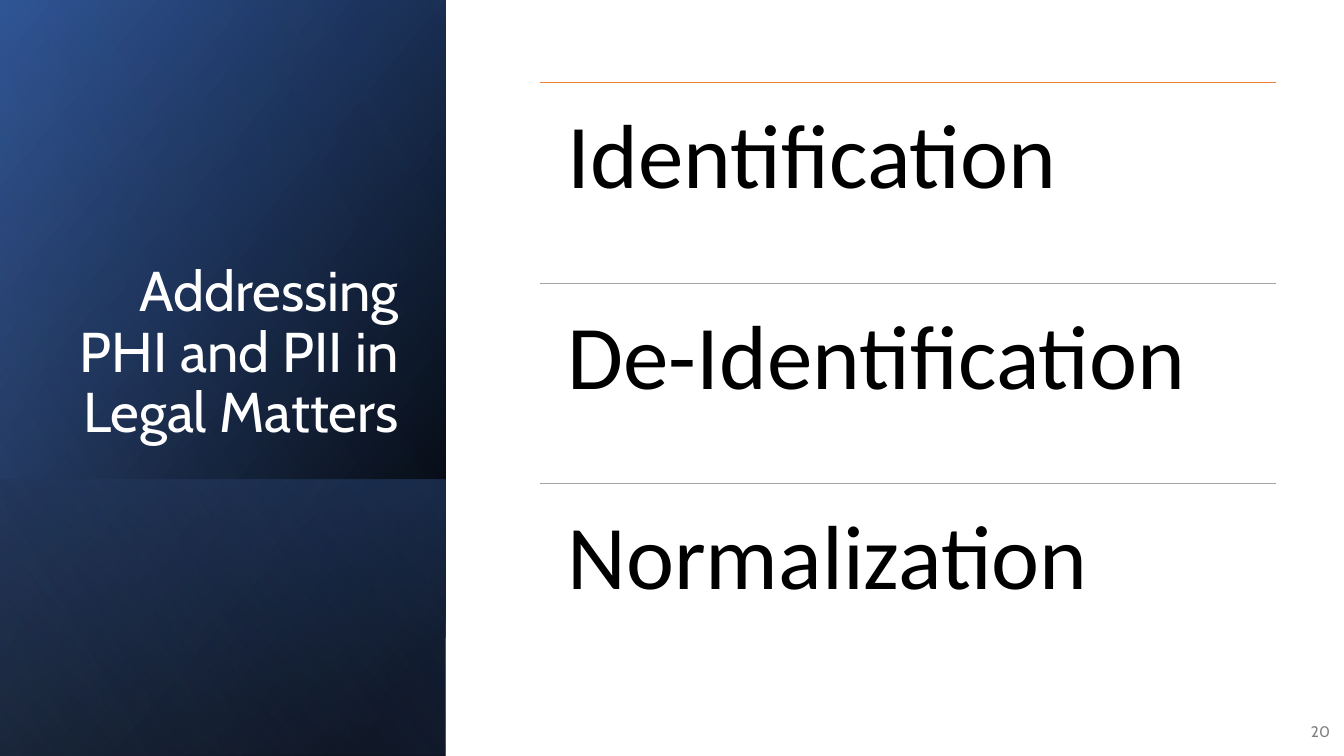
from lxml.etree import SubElement
from pptx import Presentation
from pptx.dml.color import RGBColor
from pptx.enum.shapes import MSO_CONNECTOR, MSO_SHAPE
from pptx.enum.text import MSO_ANCHOR, PP_ALIGN
from pptx.oxml.ns import qn
from pptx.util import Inches, Pt

BLACK = RGBColor(0x00, 0x00, 0x00)
WHITE = RGBColor(0xFF, 0xFF, 0xFF)
GRAY = RGBColor(0x80, 0x80, 0x80)
DEEP_BLUE = RGBColor(0x2F, 0x55, 0x97)
MID_BLUE = RGBColor(0x44, 0x72, 0xC4)
PALE_BLUE = RGBColor(0x8F, 0xAA, 0xDC)
ORANGE = RGBColor(0xED, 0x7D, 0x31)
RULE_GRAY = RGBColor(0xA5, 0xA5, 0xA5)

PANEL_WIDTH = 4.42
SLIDE_HEIGHT = 7.5
LIST_LEFT, LIST_TOP, LIST_WIDTH, ROW_HEIGHT = 5.36, 0.82, 7.3, 1.99


def add_gradient_panel(page, top, height, stops, angle):
    """Add a turned, mirrored panel; stops are (position, colour, opacity %)."""
    left = (PANEL_WIDTH - height) / 2
    panel = page.shapes.add_shape(
        MSO_SHAPE.RECTANGLE, Inches(left), Inches(top - left),
        Inches(height), Inches(PANEL_WIDTH))
    panel.rotation = 90
    panel.shadow.inherit = False
    panel.line.fill.background()
    properties = panel._element.spPr
    properties.find(qn("a:xfrm")).set("flipH", "1")
    panel.fill.gradient()
    panel.fill.gradient_angle = 360 - angle
    for stop, (position, color, _) in zip(panel.fill.gradient_stops, stops):
        stop.position = position
        stop.color.rgb = color
    for color_element, (_, _, opacity) in zip(properties.iter(qn("a:srgbClr")), stops):
        if opacity < 100:
            SubElement(color_element, qn("a:alpha")).set("val", str(opacity * 1000))


def add_text(page, bounds, text, font, size, color,
             align=PP_ALIGN.LEFT, anchor=MSO_ANCHOR.TOP, inset=None):
    box = page.shapes.add_textbox(*(Inches(length) for length in bounds))
    frame = box.text_frame
    frame.word_wrap = True
    frame.vertical_anchor = anchor
    if inset is not None:
        frame.margin_left = frame.margin_right = Inches(inset)
        frame.margin_top = frame.margin_bottom = Inches(inset)
    frame.text = text
    paragraph = frame.paragraphs[0]
    paragraph.alignment = align
    span = paragraph.runs[0]
    span.font.name = font
    span.font.size = Pt(size)
    span.font.color.rgb = color
    return paragraph


def add_rule(page, top, color):
    rule = page.shapes.add_connector(
        MSO_CONNECTOR.STRAIGHT, Inches(LIST_LEFT), Inches(top),
        Inches(LIST_LEFT + LIST_WIDTH), Inches(top))
    rule.line.color.rgb = color
    rule.line.width = Pt(0.5)
    SubElement(rule._element.spPr, qn("a:effectLst"))


def add_topic(page, top, topic, rule_color):
    add_rule(page, top, rule_color)
    paragraph = add_text(page, (LIST_LEFT, top, LIST_WIDTH, ROW_HEIGHT),
                         topic, "Calibri", 65, BLACK, inset=0.27)
    paragraph.line_spacing = 0.9


def main():
    deck = Presentation()
    deck.slide_width = Inches(13.33)
    deck.slide_height = Inches(SLIDE_HEIGHT)
    page = deck.slides.add_slide(deck.slide_layouts[6])

    add_gradient_panel(page, 0, SLIDE_HEIGHT,
                       [(0.08, BLACK, 100), (1, DEEP_BLUE, 100)], 50)
    add_gradient_panel(page, 4.76, 2.74,
                       [(0.02, MID_BLUE, 29), (1, BLACK, 30)], 130)
    add_gradient_panel(page, 0, SLIDE_HEIGHT,
                       [(0, BLACK, 0), (0.99, PALE_BLUE, 11)], 120)

    title = add_text(page, (0.64, 1.84, 3.41, 2.62),
                     "Addressing PHI and PII in Legal Matters", "Cabin", 40,
                     WHITE, PP_ALIGN.RIGHT, MSO_ANCHOR.BOTTOM)
    title.line_spacing = 0.9
    number = add_text(page, (12.8, 7.06, 0.49, 0.4), "20", "Cabin", 11,
                      GRAY, PP_ALIGN.RIGHT, MSO_ANCHOR.MIDDLE)
    number.space_after = Pt(6)

    topics = [("Identification", ORANGE), ("De-Identification", RULE_GRAY),
              ("Normalization", RULE_GRAY)]
    for row, (topic, rule_color) in enumerate(topics):
        add_topic(page, LIST_TOP + row * ROW_HEIGHT, topic, rule_color)

    deck.save("out.pptx")


if __name__ == "__main__":
    main()
